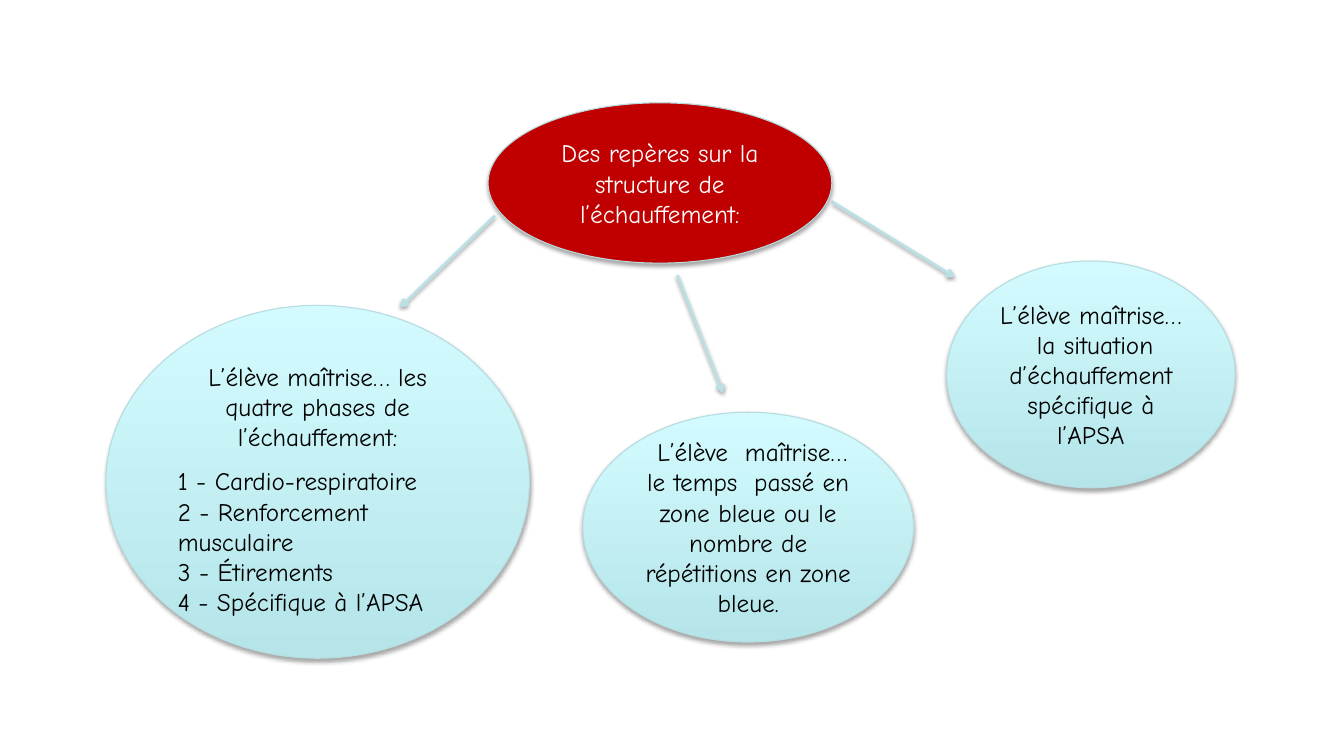
from dataclasses import dataclass

from pptx import Presentation
from pptx.dml.color import RGBColor
from pptx.enum.shapes import MSO_CONNECTOR as Connector, MSO_SHAPE as Shape
from pptx.enum.text import MSO_ANCHOR as Anchor, PP_ALIGN as Align
from pptx.oxml import parse_xml
from pptx.oxml.ns import nsdecls, qn
from pptx.util import Inches, Pt

RED = RGBColor(0xC0, 0x00, 0x00)
WHITE = RGBColor(0xFF, 0xFF, 0xFF)
BLACK = RGBColor(0x00, 0x00, 0x00)
OUTLINE = RGBColor(0xB6, 0xDC, 0xDF)
ARROW_BLUE = RGBColor(0xBB, 0xE0, 0xE3)
BUBBLE_BOTTOM = RGBColor(0xB5, 0xE5, 0xE9)
BUBBLE_TOP = RGBColor(0xD3, 0xFB, 0xFF)

WIDTH, HEIGHT = Inches(13.33), Inches(7.5)
PHASE_GAP = Pt(10)
FONT = {"name": "Comic Neue", "size": Pt(18)}


@dataclass
class Bubble:
    """An ellipse, placed in percent of the slide's width and height."""
    left: float
    top: float
    width: float
    height: float
    heading: str
    items: tuple[str, ...] = ()
    is_root: bool = False


@dataclass
class Arrow:
    """A straight arrow, placed in percent of the slide's width and height."""
    from_x: float
    from_y: float
    to_x: float
    to_y: float


BUBBLES = [
    Bubble(36.31, 13.6, 25.58, 21.2,
           "Des repères sur la structure de l’échauffement:", is_root=True),
    Bubble(7.88, 40.4, 31.51, 46.67,
           "L’élève maîtrise… les quatre phases de l’échauffement:",
           ("1 - Cardio-respiratoire", "2 - Renforcement musculaire",
            "3 - Étirements", "4 - Spécifique à l’APSA")),
    Bubble(43.36, 54.53, 24.61, 30.4,
           " L’élève  maîtrise… le temps  passé en zone bleue ou le nombre "
           "de répétitions en zone bleue."),
    Bubble(70.44, 34.53, 21.46, 30,
           "L’élève maîtrise…  la situation d’échauffement spécifique à l’APSA"),
]
ARROWS = [
    Arrow(36.83, 28.53, 29.78, 40.67),
    Arrow(50.41, 36.4, 53.79, 52),
    Arrow(61.89, 26.67, 71.04, 36.67),
]


def across(percent: float) -> int:
    return round(WIDTH * percent / 100)


def down(percent: float) -> int:
    return round(HEIGHT * percent / 100)


def set_all(target: object, values: dict) -> None:
    for name, value in values.items():
        setattr(target, name, value)


def add_shadow(item, distance: float, opacity: int) -> None:
    item._element.spPr.append(parse_xml(
        f'<a:effectLst {nsdecls("a")}>'
        f'<a:outerShdw blurRad="{Pt(3.1)}" dist="{Pt(distance)}" dir="5400000" rotWithShape="0">'
        f'<a:srgbClr val="000000"><a:alpha val="{opacity * 1000}"/></a:srgbClr>'
        '</a:outerShdw></a:effectLst>'))


def paint(ellipse, is_root: bool) -> None:
    fill = ellipse.fill
    if is_root:
        fill.solid()
        fill.fore_color.rgb = RED
    else:
        fill.gradient()
        fill.gradient_angle = 90
        for stop, colour in zip(fill.gradient_stops, (BUBBLE_BOTTOM, BUBBLE_TOP)):
            stop.color.rgb = colour
    ellipse.line.color.rgb = OUTLINE
    ellipse.line.width = Pt(0.75)
    add_shadow(ellipse, 1.8, 35)


def add_bubble(page, bubble: Bubble) -> None:
    ellipse = page.shapes.add_shape(
        Shape.OVAL, across(bubble.left), down(bubble.top),
        across(bubble.width), down(bubble.height))
    paint(ellipse, bubble.is_root)

    frame = ellipse.text_frame
    set_all(frame, {"word_wrap": True, "vertical_anchor": Anchor.MIDDLE})
    if bubble.items:
        frame.margin_top += PHASE_GAP
    for index, text in enumerate((bubble.heading, *bubble.items)):
        para = frame.add_paragraph() if index else frame.paragraphs[0]
        para.alignment = Align.LEFT if index else Align.CENTER
        if index == 1:
            para.space_before = PHASE_GAP
        span = para.add_run()
        span.text = text
        set_all(span.font, FONT)
        span.font.color.rgb = WHITE if bubble.is_root else BLACK


def add_arrow(page, arrow: Arrow) -> None:
    link = page.shapes.add_connector(
        Connector.STRAIGHT, across(arrow.from_x), down(arrow.from_y),
        across(arrow.to_x), down(arrow.to_y))
    link.line.color.rgb = ARROW_BLUE
    link.line.width = Pt(2)
    link._element.spPr.find(qn("a:ln")).append(
        parse_xml(f'<a:tailEnd {nsdecls("a")} type="arrow"/>'))
    add_shadow(link, 1.6, 38)


def main() -> None:
    deck = Presentation()
    set_all(deck, {"slide_width": WIDTH, "slide_height": HEIGHT})
    page = deck.slides.add_slide(deck.slide_layouts[6])

    # Arrows lie behind the bubbles
    for arrow in ARROWS:
        add_arrow(page, arrow)
    for bubble in BUBBLES:
        add_bubble(page, bubble)

    deck.save("out.pptx")


if __name__ == "__main__":
    main()
